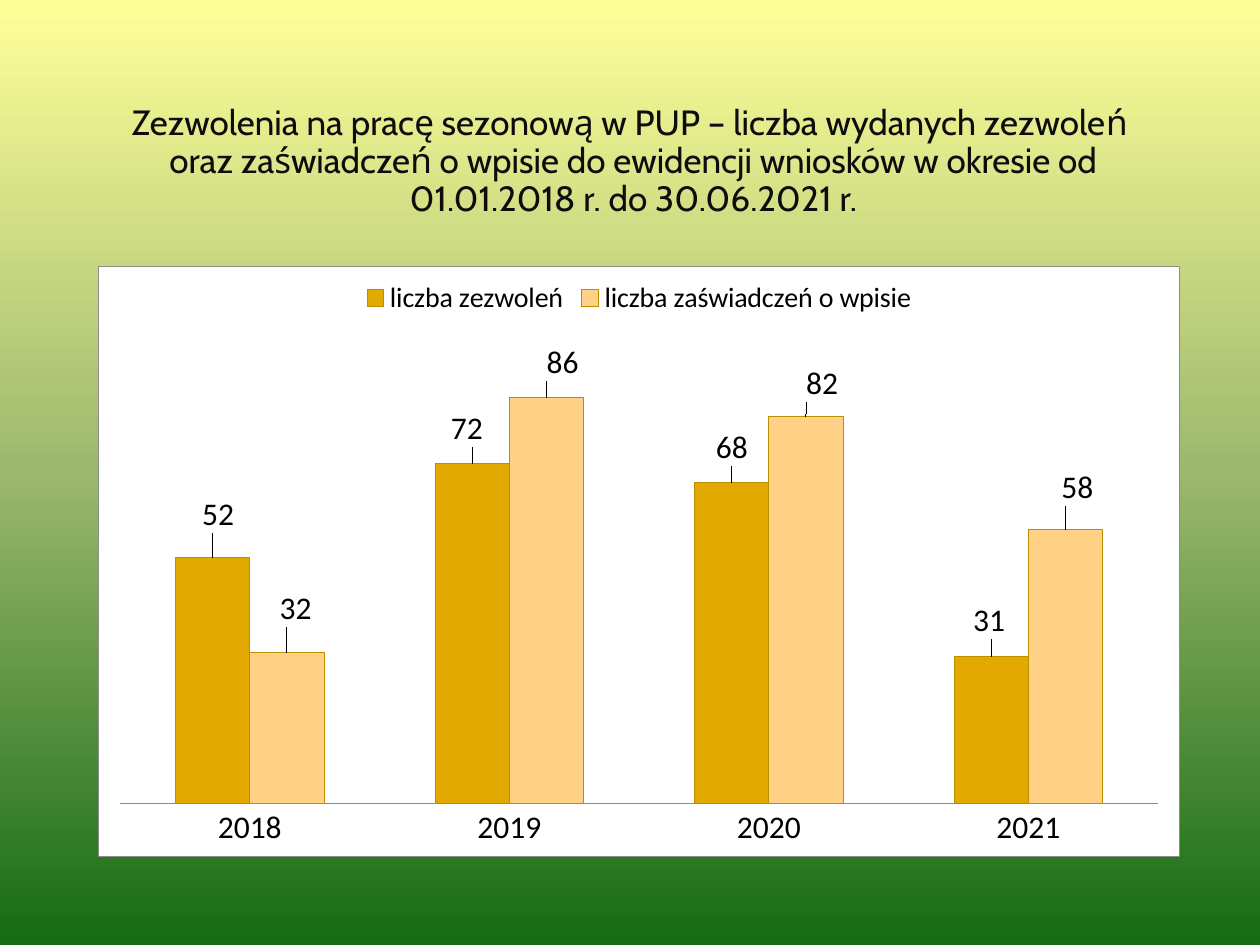
from lxml.etree import SubElement
from pptx import Presentation
from pptx.chart.data import CategoryChartData
from pptx.dml.color import RGBColor
from pptx.enum.chart import XL_CHART_TYPE, XL_LABEL_POSITION, XL_LEGEND_POSITION, XL_TICK_MARK
from pptx.enum.text import MSO_ANCHOR, PP_ALIGN
from pptx.oxml import parse_xml
from pptx.oxml.ns import nsdecls, qn
from pptx.util import Pt

TITLE = ("Zezwolenia na pracę sezonową w PUP – liczba wydanych zezwoleń \v"
         "oraz zaświadczeń o wpisie do ewidencji wniosków w okresie od "
         "01.01.2018 r. do 30.06.2021 r.")
YEARS = ["2018", "2019", "2020", "2021"]
SERIES = [
    ("liczba zezwoleń", [52, 72, 68, 31], "E2AA00",
     [(3, -11), (-3, -6), (0, -6), (-1, -7)]),
    ("liczba zaświadczeń o wpisie", [32, 86, 82, 58], "FFD187",
     [(5, -11), (9, -6), (9, -5), (7, -10)]),
]


def color(code):
    return RGBColor.from_string(code)


def style(font, size, name="Calibri", code="000000"):
    font.size, font.name = Pt(size), name
    font.color.rgb = color(code)


def outline(line, code):
    line.color.rgb = color(code)
    line.width = Pt(0.5)


def backdrop(slide, stops):
    fill = slide.background.fill
    fill.gradient()
    grad = slide.element.find(".//" + qn("a:gradFill"))
    grad.find(qn("a:lin")).set("ang", "5400000")
    items = grad.find(qn("a:gsLst"))
    for old in list(items):
        items.remove(old)
    for pos, code in stops:
        stop = SubElement(items, qn("a:gs"), pos=str(pos * 1000))
        SubElement(stop, qn("a:srgbClr"), val=code)


def heading(slide, box):
    frame = slide.shapes.add_textbox(*map(Pt, box)).text_frame
    frame.word_wrap = True
    frame.vertical_anchor = MSO_ANCHOR.BOTTOM
    para = frame.paragraphs[0]
    para.text = TITLE
    para.alignment = PP_ALIGN.CENTER
    para.line_spacing = 0.9
    for run in para.runs:
        style(run.font, 20, "Cabin", "0D0D0D")


def layout(**parts):
    tags = "".join(f'<c:{key} val="{val}"/>' for key, val in parts.items())
    return parse_xml(f'<c:layout {nsdecls("c")}><c:manualLayout>{tags}'
                     '</c:manualLayout></c:layout>')


def panel(chart):
    shape = parse_xml(
        f'<c:spPr {nsdecls("c", "a")}>'
        '<a:solidFill><a:srgbClr val="FFFFFF"/></a:solidFill>'
        '<a:ln w="6350"><a:solidFill><a:srgbClr val="8C8C8C"/></a:solidFill></a:ln>'
        '</c:spPr>')
    chart.element.find(qn("c:chart")).addnext(shape)


def labels(series, node, shifts, width, height):
    style(series.data_labels.font, 18)
    series.data_labels.show_value = True
    for num in range(len(shifts)):
        label = series.points[num].data_label
        style(label.font, 18)
        label.position = XL_LABEL_POSITION.OUTSIDE_END
    for item, (dx, dy) in zip(node.iter(qn("c:dLbl")), shifts):
        item.find(qn("c:idx")).addnext(
            layout(x=round(dx / width, 3), y=round(dy / height, 3)))


def columns(slide, box):
    data = CategoryChartData()
    data.categories = YEARS
    for name, vals, *_ in SERIES:
        data.add_series(name, vals)
    chart = slide.shapes.add_chart(
        XL_CHART_TYPE.COLUMN_CLUSTERED, *map(Pt, box), data).chart
    panel(chart)
    style(chart.font, 18)
    chart.has_title = False
    chart.has_legend = True
    chart.legend.position = XL_LEGEND_POSITION.TOP
    chart.legend.include_in_layout = False
    style(chart.legend.font, 16)

    value = chart.value_axis
    value.minimum_scale, value.maximum_scale = 0, 100
    value.has_major_gridlines = False
    value.visible = False
    axis = chart.category_axis
    axis.major_tick_mark = XL_TICK_MARK.NONE
    style(axis.tick_labels.font, 18)
    outline(axis.format.line, "8C8C8C")

    plot = chart.plots[0]
    plot.gap_width, plot.overlap = 150, 0
    plot.vary_by_categories = False
    nodes = chart.element.iter(qn("c:ser"))
    for series, node, (_, _, code, shifts) in zip(plot.series, nodes, SERIES):
        series.format.fill.solid()
        series.format.fill.fore_color.rgb = color(code)
        outline(series.format.line, "BD8E00")
        labels(series, node, shifts, *box[2:])

    area = chart.element.find(".//" + qn("c:plotArea"))
    for old in area.findall(qn("c:layout")):
        area.remove(old)
    area.insert(0, layout(layoutTarget="inner", xMode="edge", yMode="edge",
                          x=0.02, y=0.11, w=0.96, h=0.8))


def main():
    deck = Presentation()
    deck.slide_width, deck.slide_height = Pt(720), Pt(540)
    slide = deck.slides.add_slide(deck.slide_layouts[6])
    backdrop(slide, [(0, "FFFF99"), (50, "9CB86E"), (100, "156B13")])
    heading(slide, (56, 44.5, 612, 84))
    columns(slide, (56, 152, 618.5, 337.5))
    deck.save("out.pptx")


if __name__ == "__main__":
    main()
